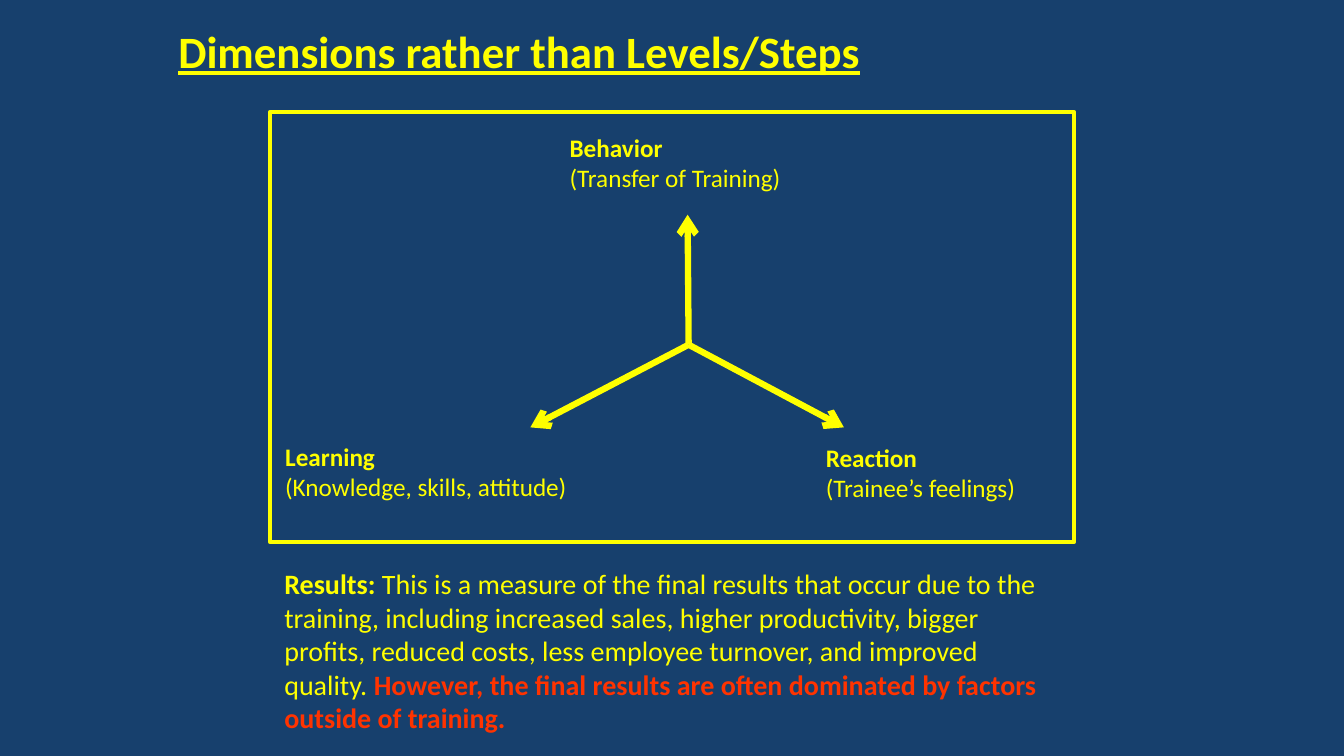
import pptx
import pptx.util
import pptx.dml.color
import pptx.enum.shapes
import pptx.enum.text
import pptx.oxml.ns
import lxml.etree

WIDE, HIGH = 13.33, 7.5
HUES = {"back": "17406D", "main": "FFFF00", "alert": "FF3300"}
FONT = "Calibri"
HUB = (6.83, 3.42)
TIPS = [(6.82, 2.13), (5.26, 4.24), (8.37, 4.24)]
# Heading, detail, box and insets of each dimension
LABELS = [
    ("Behavior", "(Transfer of Training)", (5.51, 1.24, 2.4, 0.75), (0.14, 0.07)),
    ("Reaction", "(Trainee’s feelings)", (8.05, 4.32, 2.19, 0.75), (0.14, 0.07)),
    ("Learning", "(Knowledge, skills, attitude)", (2.73, 4.33, 3.03, 0.71), (0.1, 0.05)),
]


def hue(name):
    return pptx.dml.color.RGBColor.from_string(HUES[name])


def inches(values):
    return [pptx.util.Inches(value) for value in values]


def style(font, size, bold=None):
    font.name = FONT
    font.size = pptx.util.Pt(size)
    font.color.rgb = hue("main")
    font.bold = bold


def add_box(slide, box, inset, wrap=True):
    frame = slide.shapes.add_textbox(*inches(box)).text_frame
    frame.word_wrap = wrap
    frame.margin_left, frame.margin_top = inches(inset)
    frame.margin_right, frame.margin_bottom = inches(inset)
    return frame


def add_title(slide, text):
    frame = add_box(slide, (1.67, 0.17, 9.93, 0.67), (0.1, 0.05))
    frame.vertical_anchor = pptx.enum.text.MSO_ANCHOR.MIDDLE
    line = frame.paragraphs[0]
    line.text = text
    style(line.font, 32, True)
    line.font.underline = True


def add_label(slide, head, note, box, inset):
    frame = add_box(slide, box, inset, wrap=False)
    frame.auto_size = pptx.enum.text.MSO_AUTO_SIZE.SHAPE_TO_FIT_TEXT
    frame.text = f"{head}\n{note}"
    for line, bold in zip(frame.paragraphs, (True, False)):
        style(line.font, 18, bold)


def add_prose(slide, box, parts):
    frame = add_box(slide, box, (0.07, 0.04))
    frame.auto_size = pptx.enum.text.MSO_AUTO_SIZE.SHAPE_TO_FIT_TEXT
    line = frame.paragraphs[0]
    for text, name, bold in parts:
        run = line.add_run()
        run.text = text
        style(run.font, 20, bold)
        run.font.color.rgb = hue(name)


def add_arrow(slide, start, end):
    arrow = slide.shapes.add_connector(
        pptx.enum.shapes.MSO_CONNECTOR.STRAIGHT, *inches(start + end))
    arrow.line.color.rgb = hue("main")
    arrow.line.width = pptx.util.Pt(4.5)
    tag = pptx.oxml.ns.qn
    lxml.etree.SubElement(arrow.line._get_or_add_ln(), tag("a:tailEnd"), type="arrow")
    lxml.etree.SubElement(arrow._element.spPr, tag("a:effectLst"))


def add_frame(slide, box):
    frame = slide.shapes.add_shape(
        pptx.enum.shapes.MSO_SHAPE.RECTANGLE, *inches(box))
    frame.shadow.inherit = False
    frame.fill.background()
    frame.line.color.rgb = hue("main")
    frame.line.width = pptx.util.Pt(3)
    lxml.etree.SubElement(frame.line._get_or_add_ln(), pptx.oxml.ns.qn("a:round"))


def main():
    deck = pptx.Presentation()
    deck.slide_width, deck.slide_height = inches((WIDE, HIGH))
    slide = deck.slides.add_slide(deck.slide_layouts[6])
    slide.background.fill.solid()
    slide.background.fill.fore_color.rgb = hue("back")

    # Heading and closing text
    add_title(slide, "Dimensions rather than Levels/Steps")
    add_prose(slide, (2.75, 5.58, 7.86, 1.75), [
        ("Results: ", "main", True),
        ("This is a measure of the final results that occur due to the training, "
         "including increased sales, higher productivity, bigger profits, reduced "
         "costs, less employee turnover, and improved quality. ", "main", False),
        ("However, the final results are often dominated by factors outside of "
         "training.", "alert", True),
    ])

    # Framed diagram of three axes
    for label in LABELS:
        add_label(slide, *label)
    for tip in TIPS:
        add_arrow(slide, HUB, tip)
    add_frame(slide, (2.68, 1.11, 7.97, 4.27))

    deck.save("out.pptx")


if __name__ == "__main__":
    main()
